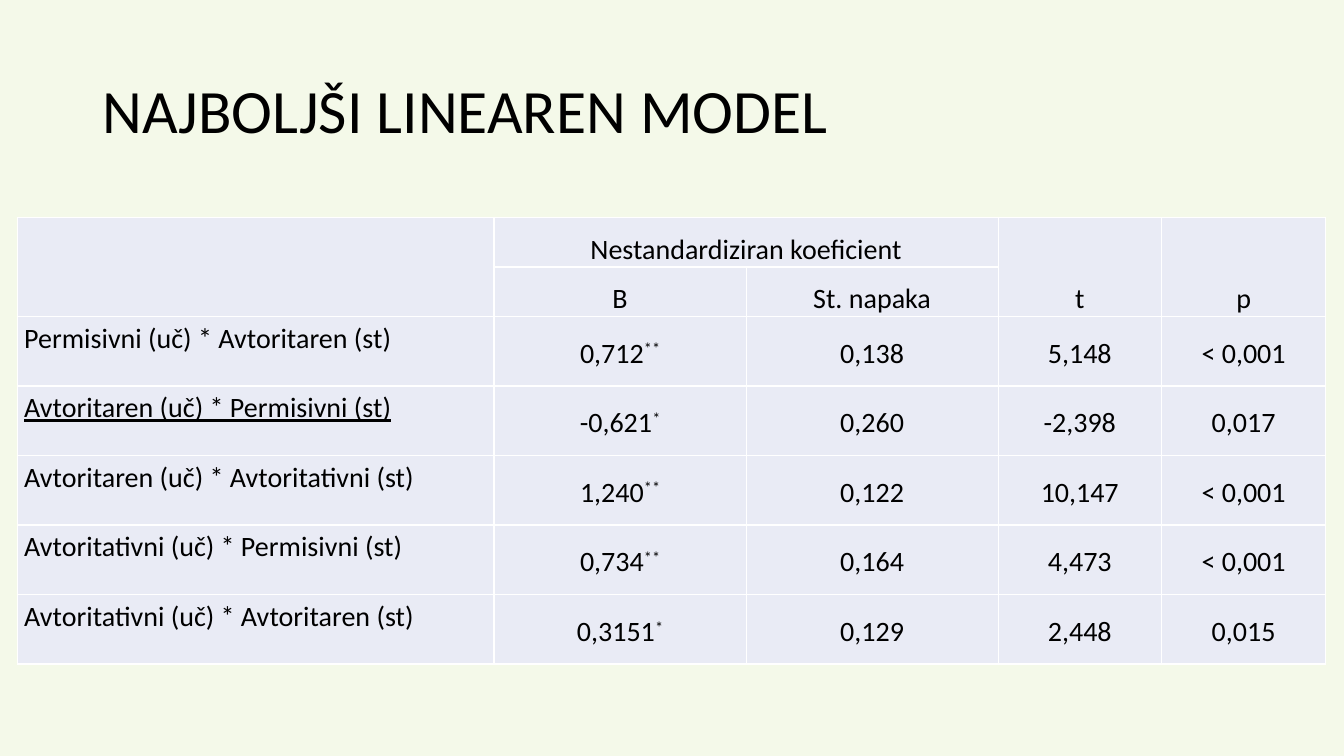
import pptx
import pptx.dml.color
import pptx.enum.text
import pptx.oxml
import pptx.oxml.ns
import pptx.util

ALIGN = pptx.enum.text.PP_ALIGN
ANCHOR = pptx.enum.text.MSO_ANCHOR
BLACK = pptx.dml.color.RGBColor(0x00, 0x00, 0x00)
WHITE = pptx.dml.color.RGBColor(0xFF, 0xFF, 0xFF)
CREAM = pptx.dml.color.RGBColor(0xF4, 0xF9, 0xE9)
LAVENDER = pptx.dml.color.RGBColor(0xE9, 0xEB, 0xF5)
EMU_PER_PX = 9144

COLUMN_WIDTHS = [473, 250, 250, 162, 163]
ROW_HEIGHTS = [49] * 2 + [69] * 5
HEADER_MERGES = [(0, 0, 1, 0), (0, 1, 0, 2), (0, 3, 1, 3), (0, 4, 1, 4)]
HEADERS = [
    (0, 1, "Nestandardiziran koeficient"),
    (0, 3, "t"),
    (0, 4, "p"),
    (1, 1, "B"),
    (1, 2, "St. napaka"),
]
COEFFICIENTS = [
    ("Permisivni (uč) * Avtoritaren (st)", "0,712", "**", "0,138", "5,148", "< 0,001"),
    ("Avtoritaren (uč) * Permisivni (st)", "-0,621", "*", "0,260", "-2,398", "0,017"),
    ("Avtoritaren (uč) * Avtoritativni (st)", "1,240", "**", "0,122", "10,147", "< 0,001"),
    ("Avtoritativni (uč) * Permisivni (st)", "0,734", "**", "0,164", "4,473", "< 0,001"),
    ("Avtoritativni (uč) * Avtoritaren (st)", "0,3151", "*", "0,129", "2,448", "0,015"),
]
UNDERLINED_MODEL = "Avtoritaren (uč) * Permisivni (st)"


def px(length):
    return pptx.util.Emu(length * EMU_PER_PX)


def apply(target, values):
    for name, value in values.items():
        setattr(target, name, value)


class SlideBuilder:
    font_name = "Calibri"
    title_size = 44
    table_size = 20

    def __init__(self, presentation):
        self.slide = presentation.slides.add_slide(presentation.slide_layouts[5])

    def background(self, color):
        fill = self.slide.background.fill
        fill.solid()
        fill.fore_color.rgb = color

    def run(self, paragraph, text, size, underline=None):
        run = paragraph.add_run()
        run.text = text
        apply(run.font, {
            "name": self.font_name,
            "size": pptx.util.Pt(size),
            "underline": underline,
        })
        run.font.color.rgb = BLACK
        return run

    def title(self, text, left, top, width, height):
        shape = self.slide.shapes.title
        apply(shape, {"left": px(left), "top": px(top), "width": px(width), "height": px(height)})
        apply(shape.text_frame, {
            "word_wrap": True,
            "auto_size": pptx.enum.text.MSO_AUTO_SIZE.NONE,
            "vertical_anchor": ANCHOR.MIDDLE,
        })
        paragraph = shape.text_frame.paragraphs[0]
        apply(paragraph, {"alignment": ALIGN.LEFT, "line_spacing": 0.9})
        self.run(paragraph, text, self.title_size)

    def table(self, left, top, widths, heights):
        frame = self.slide.shapes.add_table(
            len(heights), len(widths), px(left), px(top), px(sum(widths)), px(sum(heights)))
        table = frame.table
        apply(table, {"first_row": False, "horz_banding": False})
        for column, width in zip(table.columns, widths):
            column.width = px(width)
        for row, height in zip(table.rows, heights):
            row.height = px(height)
        for cell in table.iter_cells():
            self.cell_style(cell)
        return table

    def cell_style(self, cell):
        apply(cell, {"margin_left": px(7), "margin_right": px(7), "margin_top": 0, "margin_bottom": 0})
        properties = cell._tc.get_or_add_tcPr()
        for side in ("lnL", "lnR", "lnT", "lnB"):
            properties.append(pptx.oxml.parse_xml(
                f'<a:{side} {pptx.oxml.ns.nsdecls("a")} w="{pptx.util.Pt(1)}">'
                f'<a:solidFill><a:srgbClr val="{WHITE}"/></a:solidFill></a:{side}>'))
        cell.fill.solid()
        cell.fill.fore_color.rgb = LAVENDER

    def cell_text(self, cell, text, anchor, alignment=ALIGN.CENTER, stars="", underline=None):
        cell.vertical_anchor = anchor
        paragraph = cell.text_frame.paragraphs[0]
        apply(paragraph, {"alignment": alignment, "line_spacing": 1.15})
        self.run(paragraph, text, self.table_size, underline)
        if stars:
            superscript = self.run(paragraph, stars, self.table_size)
            superscript._r.get_or_add_rPr().set("baseline", "30000")


def main():
    presentation = pptx.Presentation()
    apply(presentation, {"slide_width": px(1333), "slide_height": px(750)})
    builder = SlideBuilder(presentation)
    builder.background(CREAM)
    builder.title("NAJBOLJŠI LINEAREN MODEL", 92, 40, 1150, 145)

    table = builder.table(17, 216, COLUMN_WIDTHS, ROW_HEIGHTS)
    for first_row, first_column, last_row, last_column in HEADER_MERGES:
        table.cell(first_row, first_column).merge(table.cell(last_row, last_column))
    for row, column, text in HEADERS:
        builder.cell_text(table.cell(row, column), text, ANCHOR.BOTTOM)

    for row, (model, coefficient, stars, *statistics) in enumerate(COEFFICIENTS, start=2):
        underline = True if model == UNDERLINED_MODEL else None
        builder.cell_text(table.cell(row, 0), model, ANCHOR.TOP, ALIGN.JUSTIFY, underline=underline)
        builder.cell_text(table.cell(row, 1), coefficient, ANCHOR.MIDDLE, stars=stars)
        for column, value in enumerate(statistics, start=2):
            builder.cell_text(table.cell(row, column), value, ANCHOR.MIDDLE)

    presentation.save("out.pptx")


if __name__ == "__main__":
    main()
